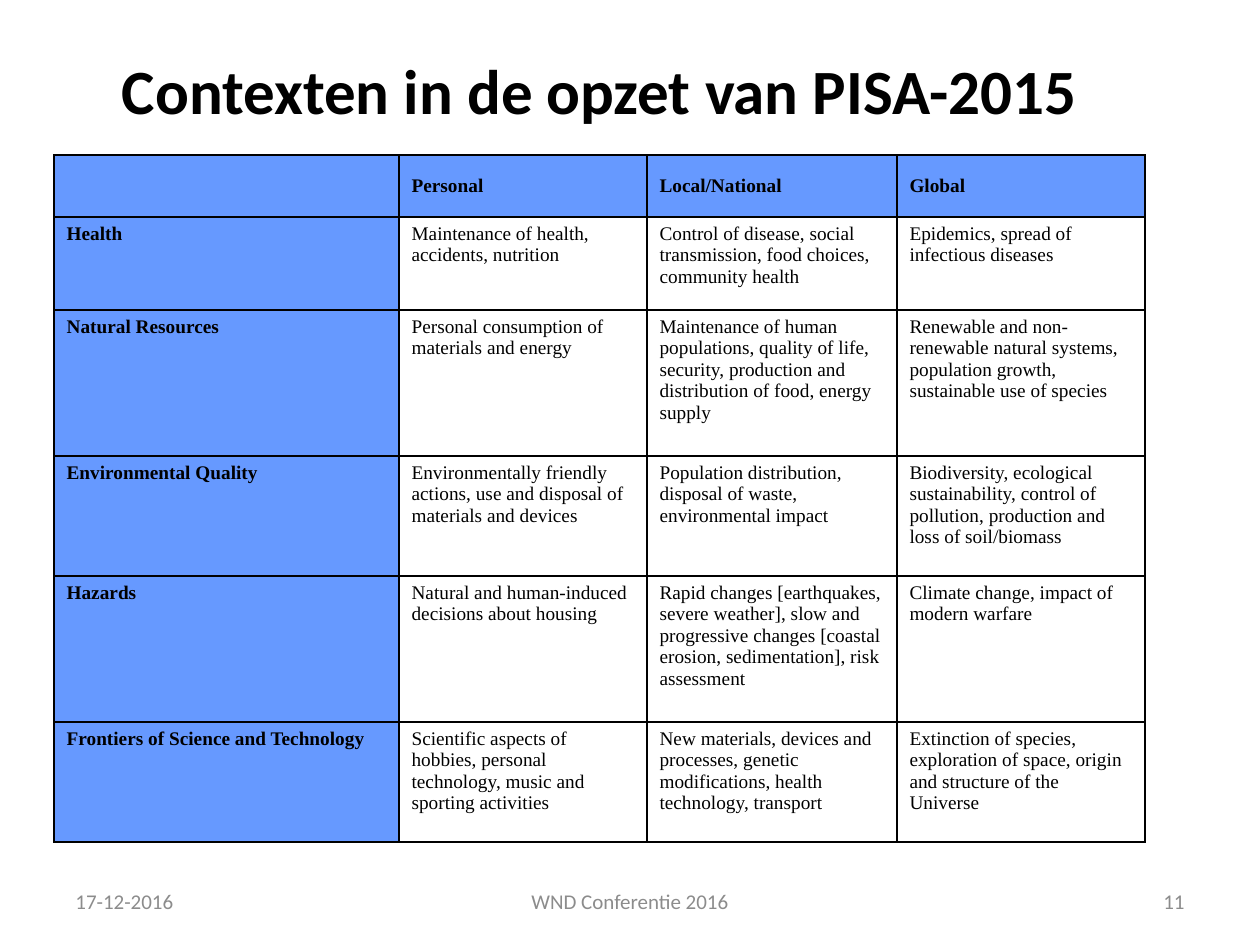
import pptx
import pptx.util
import pptx.dml.color
import pptx.enum.text
import pptx.oxml.ns
from lxml import etree

RGB = pptx.dml.color.RGBColor
BLACK = RGB(0x00, 0x00, 0x00)
WHITE = RGB(0xFF, 0xFF, 0xFF)
BLUE = RGB(0x66, 0x99, 0xFF)
GREY = RGB(0x8C, 0x8C, 0x8C)

ALIGN = pptx.enum.text.PP_ALIGN
ANCHOR = pptx.enum.text.MSO_ANCHOR
PX_PER_INCH = 126

COLUMN_WIDTHS = [345, 248, 250, 248]
ROW_HEIGHTS = [62, 93, 146, 120, 146, 120]
CONTEXTS = [
    ["", "Personal", "Local/National", "Global"],
    ["Health",
     "Maintenance of health, accidents, nutrition",
     "Control of disease, social transmission, food choices, community health",
     "Epidemics, spread of infectious diseases"],
    ["Natural Resources",
     "Personal consumption of materials and energy",
     "Maintenance of human populations, quality of life, security, "
     "production and distribution of food, energy supply",
     "Renewable and non-renewable natural systems, population growth, "
     "sustainable use of species"],
    ["Environmental Quality",
     "Environmentally friendly actions, use and disposal of materials and devices",
     "Population distribution, disposal of waste, environmental impact",
     "Biodiversity, ecological sustainability, control of pollution, "
     "production and loss of soil/biomass"],
    ["Hazards",
     "Natural and human-induced decisions about housing",
     "Rapid changes [earthquakes, severe weather], slow and progressive "
     "changes [coastal erosion, sedimentation], risk assessment",
     "Climate change, impact of modern warfare"],
    ["Frontiers of Science and Technology",
     "Scientific aspects of hobbies, personal technology, music and sporting activities",
     "New materials, devices and processes, genetic modifications, "
     "health technology, transport",
     "Extinction of species, exploration of space, origin and structure of the Universe"],
]


def px(n):
    return pptx.util.Emu(round(n * 914400 / PX_PER_INCH))


def write(tf, text, size=12, font="Calibri", color=BLACK, bold=False,
          align=ALIGN.LEFT):
    tf.word_wrap = True
    p = tf.paragraphs[0]
    p.alignment = align
    r = p.add_run()
    r.text = text
    r.font.size = pptx.util.Pt(size)
    r.font.name = font
    r.font.bold = bold
    r.font.color.rgb = color


def set_borders(cell, color=BLACK, width=1):
    tc_pr = cell._tc.get_or_add_tcPr()
    qn = pptx.oxml.ns.qn
    for i, side in enumerate(("a:lnL", "a:lnR", "a:lnT", "a:lnB")):
        ln = etree.Element(qn(side), w=str(pptx.util.Pt(width)))
        fill = etree.SubElement(ln, qn("a:solidFill"))
        etree.SubElement(fill, qn("a:srgbClr"), val=str(color))
        tc_pr.insert(i, ln)  # borders come before the cell fill


def add_title(slide, x, y, w, h):
    sp = slide.shapes.title
    sp.left, sp.top, sp.width, sp.height = px(x), px(y), px(w), px(h)
    sp.text_frame.vertical_anchor = ANCHOR.MIDDLE
    write(sp.text_frame, "Contexten in de opzet van PISA-2015", size=36,
          bold=True, align=ALIGN.CENTER)


def add_context_table(slide, x, y):
    table = slide.shapes.add_table(
        len(ROW_HEIGHTS), len(COLUMN_WIDTHS), px(x), px(y),
        px(sum(COLUMN_WIDTHS)), px(sum(ROW_HEIGHTS))).table
    table.first_row = table.horz_banding = False
    for column, width in zip(table.columns, COLUMN_WIDTHS):
        column.width = px(width)
    for row, height in zip(table.rows, ROW_HEIGHTS):
        row.height = px(height)

    for i, texts in enumerate(CONTEXTS):
        for j, text in enumerate(texts):
            cell = table.cell(i, j)
            heading = i == 0 or j == 0
            cell.fill.solid()
            cell.fill.fore_color.rgb = BLUE if heading else WHITE
            cell.vertical_anchor = ANCHOR.MIDDLE if i == 0 else ANCHOR.TOP
            set_borders(cell)
            if text:
                write(cell.text_frame, text, size=11, font="Times New Roman",
                      bold=heading,
                      align=ALIGN.JUSTIFY if heading else ALIGN.LEFT)


def add_footer(slide, x, y, w, h):
    side, middle = 294, 400
    parts = [
        ("17-12-2016", 0, side, ALIGN.LEFT),
        ("WND Conferentie 2016", (w - middle) // 2, middle, ALIGN.CENTER),
        ("11", w - side, side, ALIGN.RIGHT),
    ]
    for text, dx, width, align in parts:
        sp = slide.shapes.add_textbox(px(x + dx), px(y), px(width), px(h))
        sp.text_frame.vertical_anchor = ANCHOR.MIDDLE
        write(sp.text_frame, text, color=GREY, align=align)


def main():
    prs = pptx.Presentation()
    prs.slide_width, prs.slide_height = px(1260), px(945)
    slide = prs.slides.add_slide(prs.slide_layouts[5])  # title only
    add_title(slide, 54, 44, 1091, 90)
    add_context_table(slide, 54, 155)
    add_footer(slide, 63, 876, 1134, 50)
    prs.save("out.pptx")


if __name__ == "__main__":
    main()
